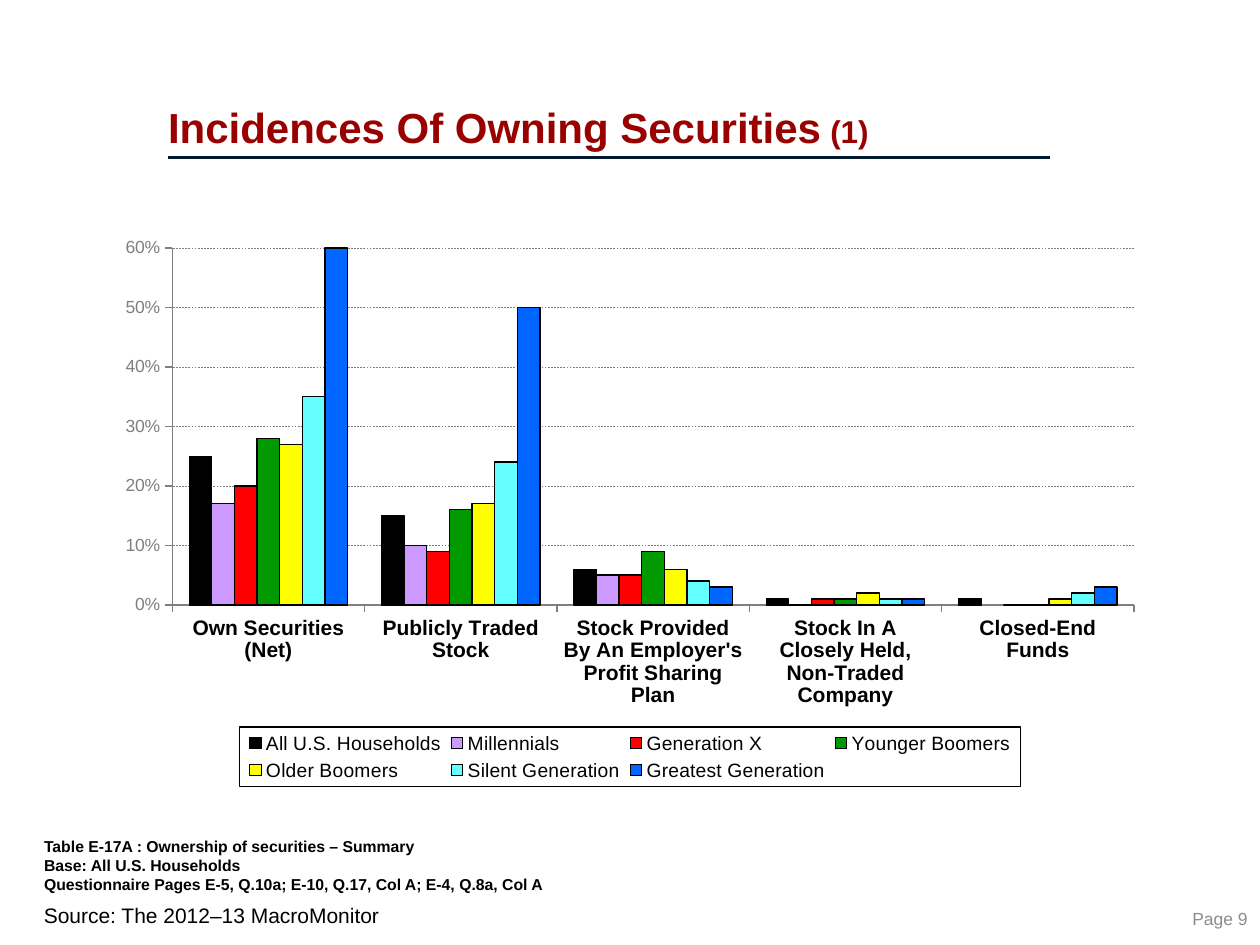
from lxml import etree
from pptx import Presentation
from pptx.chart.data import CategoryChartData
from pptx.dml.color import RGBColor
from pptx.enum.chart import XL_CHART_TYPE, XL_LEGEND_POSITION, XL_TICK_MARK
from pptx.enum.dml import MSO_LINE
from pptx.enum.shapes import MSO_CONNECTOR
from pptx.enum.text import MSO_ANCHOR, PP_ALIGN
from pptx.oxml import parse_xml
from pptx.oxml.ns import nsdecls, qn
from pptx.util import Inches, Pt

COLUMNS = XL_CHART_TYPE.COLUMN_CLUSTERED
BELOW = XL_LEGEND_POSITION.BOTTOM
OUT = XL_TICK_MARK.OUTSIDE
DASH = MSO_LINE.DASH
STRAIGHT = MSO_CONNECTOR.STRAIGHT
TOP, MIDDLE, BOTTOM = MSO_ANCHOR.TOP, MSO_ANCHOR.MIDDLE, MSO_ANCHOR.BOTTOM
LEFT, RIGHT = PP_ALIGN.LEFT, PP_ALIGN.RIGHT

WIDE, HIGH = Inches(10), Inches(7.5)
COLS, ROWS = 120, 90
FONT = "Arial"
HUES = {
    "title": "990000", "rule": "00192F", "axis": "7F7F7F", "page": "8C8C8C",
    "black": "000000", "violet": "CC99FF", "red": "FF0000", "green": "009900",
    "yellow": "FFFF00", "cyan": "66FFFF", "blue": "0066FF",
}

GROUPS = [
    "Own Securities (Net)",
    "Publicly Traded Stock",
    "Stock Provided By An Employer's Profit Sharing Plan",
    "Stock In A Closely Held, Non-Traded Company",
    "Closed-End Funds",
]
SERIES = [
    ("All U.S. Households", "black", (0.25, 0.15, 0.06, 0.01, 0.01)),
    ("Millennials", "violet", (0.17, 0.10, 0.05, 0, None)),
    ("Generation X", "red", (0.20, 0.09, 0.05, 0.01, 0)),
    ("Younger Boomers", "green", (0.28, 0.16, 0.09, 0.01, 0)),
    ("Older Boomers", "yellow", (0.27, 0.17, 0.06, 0.02, 0.01)),
    ("Silent Generation", "cyan", (0.35, 0.24, 0.04, 0.01, 0.02)),
    ("Greatest Generation", "blue", (0.60, 0.50, 0.03, 0.01, 0.03)),
]
NOTES = [
    "Table E-17A : Ownership of securities – Summary",
    "Base: All U.S. Households",
    "Questionnaire Pages E-5, Q.10a; E-10, Q.17, Col A; E-4, Q.8a, Col A",
]


def rgb(hue):
    return RGBColor.from_string(HUES[hue])


def place(parent, index, inner, **shares):
    """Set a manual layout, given as shares of the chart."""
    for old in parent.findall(qn("c:layout")):
        parent.remove(old)
    target = '<c:layoutTarget val="inner"/>' if inner else ""
    modes = "".join(f'<c:{k}Mode val="edge"/>' for k in "xy")
    sizes = "".join(f'<c:{k} val="{v}"/>' for k, v in shares.items())
    parent.insert(index, parse_xml(
        f'<c:layout {nsdecls("c")}><c:manualLayout>{target}{modes}{sizes}'
        "</c:manualLayout></c:layout>"))


class Page:
    """Holds the slide, its grid and its text style."""

    def __init__(self, deck):
        self.slide = deck.slides.add_slide(deck.slide_layouts[6])
        self.shapes = self.slide.shapes

    def grid(self, col, row, cols, rows):
        return (int(WIDE * col / COLS), int(HIGH * row / ROWS),
                int(WIDE * cols / COLS), int(HIGH * rows / ROWS))

    def style(self, font, size, hue="black", bold=False):
        font.name, font.size, font.bold = FONT, Pt(size), bold
        font.color.rgb = rgb(hue)

    def text(self, area, lines, hue="black", bold=False, anchor=TOP,
             align=LEFT, pads=(0.1, 0.05, 0.1, 0.05), pitch=None):
        """Each line is a list of (words, size) runs."""
        frame = self.shapes.add_textbox(*self.grid(*area)).text_frame
        frame.word_wrap = True
        frame.vertical_anchor = anchor
        (frame.margin_left, frame.margin_top,
         frame.margin_right, frame.margin_bottom) = map(Inches, pads)
        para = frame.paragraphs[0]
        para.alignment = align
        if pitch:
            para.line_spacing = pitch
        for i, runs in enumerate(lines):
            if i:
                para.add_line_break()
            for words, size in runs:
                run = para.add_run()
                run.text = words
                self.style(run.font, size, hue, bold)

    def rule(self, col, row, cols, hue, width):
        x, y, w, _ = self.grid(col, row, cols, 0)
        line = self.shapes.add_connector(STRAIGHT, x, y, x + w, y)
        line.line.color.rgb = rgb(hue)
        line.line.width = Pt(width)
        etree.SubElement(line._element.spPr, qn("a:effectLst"))

    def chart(self, area, groups, series):
        data = CategoryChartData(number_format="0%")
        data.categories = groups
        for name, _, values in series:
            data.add_series(name, values)
        chart = self.shapes.add_chart(COLUMNS, *self.grid(*area), data).chart
        chart.has_title = False
        self.style(chart.font, 10)
        plot = chart.plots[0]
        plot.vary_by_categories = False
        plot.gap_width, plot.overlap = 150, 0
        for bars, (_, hue, _) in zip(plot.series, series):
            bars.invert_if_negative = False
            bars.format.fill.solid()
            bars.format.fill.fore_color.rgb = rgb(hue)
            self.stroke(bars.format.line, "black", 0.75)
        self.axes(chart)
        self.legend(chart)
        place(chart._chartSpace.chart.plotArea, 0, True,
              x=0.064, y=0.036, w=0.916, h=0.638)

    def stroke(self, line, hue, width):
        line.color.rgb = rgb(hue)
        line.width = Pt(width)

    def axes(self, chart):
        cat, val = chart.category_axis, chart.value_axis
        for axis in (cat, val):
            axis.major_tick_mark = OUT
            self.stroke(axis.format.line, "axis", 0.75)
        self.style(cat.tick_labels.font, 12, bold=True)
        self.style(val.tick_labels.font, 10, "axis")
        val.tick_labels.number_format = "0%"
        val.tick_labels.number_format_is_linked = False
        val.minimum_scale, val.maximum_scale, val.major_unit = 0, 0.6, 0.1
        val.has_major_gridlines = True
        lines = val.major_gridlines.format.line
        self.stroke(lines, "axis", 0.25)
        lines.dash_style = DASH

    def legend(self, chart):
        chart.has_legend = True
        key = chart.legend
        key.position = BELOW
        key.include_in_layout = False
        self.style(key.font, 11)
        # The frame must come ahead of the text properties
        key._element.find(qn("c:txPr")).addprevious(parse_xml(
            f'<c:spPr {nsdecls("c", "a")}><a:ln w="9525"><a:solidFill>'
            f'<a:srgbClr val="{HUES["black"]}"/></a:solidFill></a:ln></c:spPr>'))
        place(key._element, 1, False, x=0.128, y=0.892, w=0.744, h=0.106)


def main():
    deck = Presentation()
    deck.slide_width, deck.slide_height = WIDE, HIGH
    page = Page(deck)

    # Heading
    page.rule(16, 15, 84, "rule", 2)
    page.text((16, 1, 86, 14),
              [[("Incidences Of Owning Securities", 24), (" (1)", 18)]],
              "title", True, BOTTOM, pads=(0, 0.05, 0, 0.05), pitch=0.8)

    # Ownership by generation
    page.chart((10, 21.7, 100, 53.3), GROUPS, SERIES)

    # Notes, source and page number
    page.text((0, 77, 84.2, 9.7), [[(note, 9)] for note in NOTES],
              bold=True, anchor=BOTTOM, pads=(0.35, 0.13, 0, 0.13))
    page.text((3, 85.4, 103, 3.6), [[("Source: The 2012–13 MacroMonitor", 12)]])
    page.text((111.1, 85.9, 8.9, 3.2), [[("Page 9", 10)]], "page",
              anchor=MIDDLE, align=RIGHT)

    deck.save("out.pptx")


if __name__ == "__main__":
    main()
